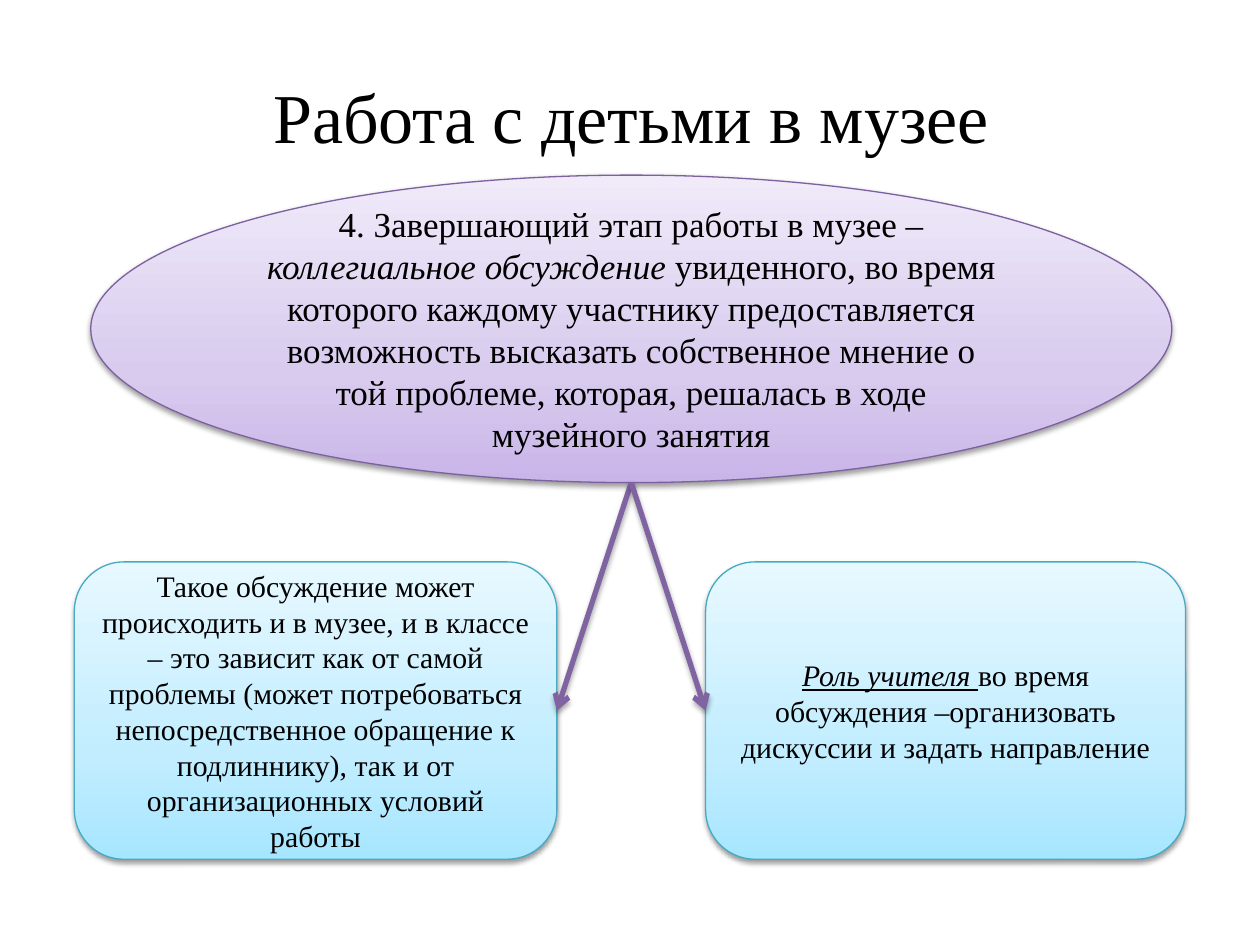
import dataclasses

import pptx
import pptx.dml.color
import pptx.enum.shapes
import pptx.enum.text
import pptx.oxml
import pptx.oxml.ns
import pptx.util
from lxml import etree

Inches = pptx.util.Inches
Pt = pptx.util.Pt
Shapes = pptx.enum.shapes.MSO_SHAPE
Anchor = pptx.enum.text.MSO_ANCHOR
qn = pptx.oxml.ns.qn


@dataclasses.dataclass(frozen=True)
class Theme:
    font: str = "Times New Roman"
    text: str = "000000"
    title_size: int = 40
    stage_size: int = 20
    detail_size: int = 17
    purple: tuple = ((0, "C9B5E8"), (35, "D8CBEE"), (100, "F0EAF9"))
    purple_line: str = "7D60A0"
    aqua: tuple = ((0, "A7E6FF"), (35, "C1EDFF"), (100, "E7F8FF"))
    aqua_line: str = "46AAC5"
    arrow: str = "8064A2"


THEME = Theme()


def color(value):
    return pptx.dml.color.RGBColor.from_string(value)


def add_color(parent, value):
    return etree.SubElement(parent, qn("a:srgbClr"), val=value)


def write_text(shape, spans, size, anchor=Anchor.MIDDLE):
    """Fill the shape with one centred paragraph of (text, italic, underline) spans."""
    frame = shape.text_frame
    frame.word_wrap = True
    frame.vertical_anchor = anchor
    para = frame.paragraphs[0]
    para.alignment = pptx.enum.text.PP_ALIGN.CENTER
    for text, italic, underline in spans:
        span = para.add_run()
        span.text = text
        font = span.font
        font.name, font.size = THEME.font, Pt(size)
        font.color.rgb = color(THEME.text)
        font.italic, font.underline = italic, underline


def add_shadow(effects, distance, opacity):
    shadow = etree.SubElement(
        effects, qn("a:outerShdw"), blurRad=str(Pt(3.1)), dist=str(Pt(distance)),
        dir="5400000", rotWithShape="0")
    etree.SubElement(add_color(shadow, "000000"), qn("a:alpha"), val=str(opacity * 1000))


def set_gradient(shape, stops):
    """Run the stops from the bottom of the shape to its top."""
    shape.fill.gradient()
    shape.fill.gradient_angle = 90
    stop_list = shape.element.spPr.find(qn("a:gradFill")).find(qn("a:gsLst"))
    for stop in list(stop_list):
        stop_list.remove(stop)
    for position, value in stops:
        add_color(etree.SubElement(stop_list, qn("a:gs"), pos=str(position * 1000)), value)


def add_title(page, box, text):
    title = page.shapes.add_textbox(*map(Inches, box))
    write_text(title, [(text, False, False)], THEME.title_size, Anchor.BOTTOM)


def add_bubble(page, box, kind, stops, line, spans, size):
    bubble = page.shapes.add_shape(kind, *map(Inches, box))
    set_gradient(bubble, stops)
    bubble.line.color.rgb = color(line)
    bubble.line.width = Pt(0.75)
    bubble.shadow.inherit = False
    add_shadow(bubble.element.spPr.find(qn("a:effectLst")), 1.6, 38)
    write_text(bubble, spans, size)


def add_arrow(page, start, end):
    arrow = page.shapes.add_connector(
        pptx.enum.shapes.MSO_CONNECTOR.STRAIGHT, *map(Inches, start + end))
    arrow.line.color.rgb = color(THEME.arrow)
    arrow.line.width = Pt(3)
    properties = arrow.element.spPr
    etree.SubElement(properties.find(qn("a:ln")), qn("a:tailEnd"), type="arrow")
    add_shadow(etree.SubElement(properties, qn("a:effectLst")), 1.8, 35)


def add_stage(page, box, spans):
    add_bubble(page, box, Shapes.OVAL, THEME.purple, THEME.purple_line,
               spans, THEME.stage_size)


def add_detail(page, box, spans):
    add_bubble(page, box, Shapes.ROUNDED_RECTANGLE, THEME.aqua, THEME.aqua_line,
               spans, THEME.detail_size)


def main():
    deck = pptx.Presentation()
    deck.slide_width, deck.slide_height = Inches(10), Inches(7.5)
    page = deck.slides.add_slide(deck.slide_layouts[6])

    stage_box = (0.72, 1.39, 8.58, 2.44)
    left_box = (0.59, 4.46, 3.83, 2.36)
    right_box = (5.6, 4.46, 3.81, 2.36)

    add_stage(page, stage_box, [
        ("4. Завершающий этап работы в музее – ", False, False),
        ("коллегиальное обсуждение ", True, False),
        ("увиденного, во время которого каждому участнику предоставляется "
         "возможность высказать собственное мнение о той проблеме, которая, "
         "решалась в ходе музейного занятия", False, False),
    ])
    add_detail(page, left_box, [
        ("Такое обсуждение может происходить и в музее, и в классе – это зависит "
         "как от самой проблемы (может потребоваться непосредственное обращение "
         "к подлиннику), так и от организационных условий работы", False, False),
    ])
    add_detail(page, right_box, [
        ("Роль учителя ", True, True),
        ("во время обсуждения –организовать дискуссии и задать направление",
         False, False),
    ])

    left, top, width, height = stage_box
    stage_foot = (left + width / 2, top + height)
    detail_middle = left_box[1] + left_box[3] / 2
    for side in (left_box[0] + left_box[2], right_box[0]):
        add_arrow(page, stage_foot, (side, detail_middle))

    add_title(page, (0.51, 0.52, 9, 0.78), "Работа с детьми в музее")
    deck.save("out.pptx")


if __name__ == "__main__":
    main()
